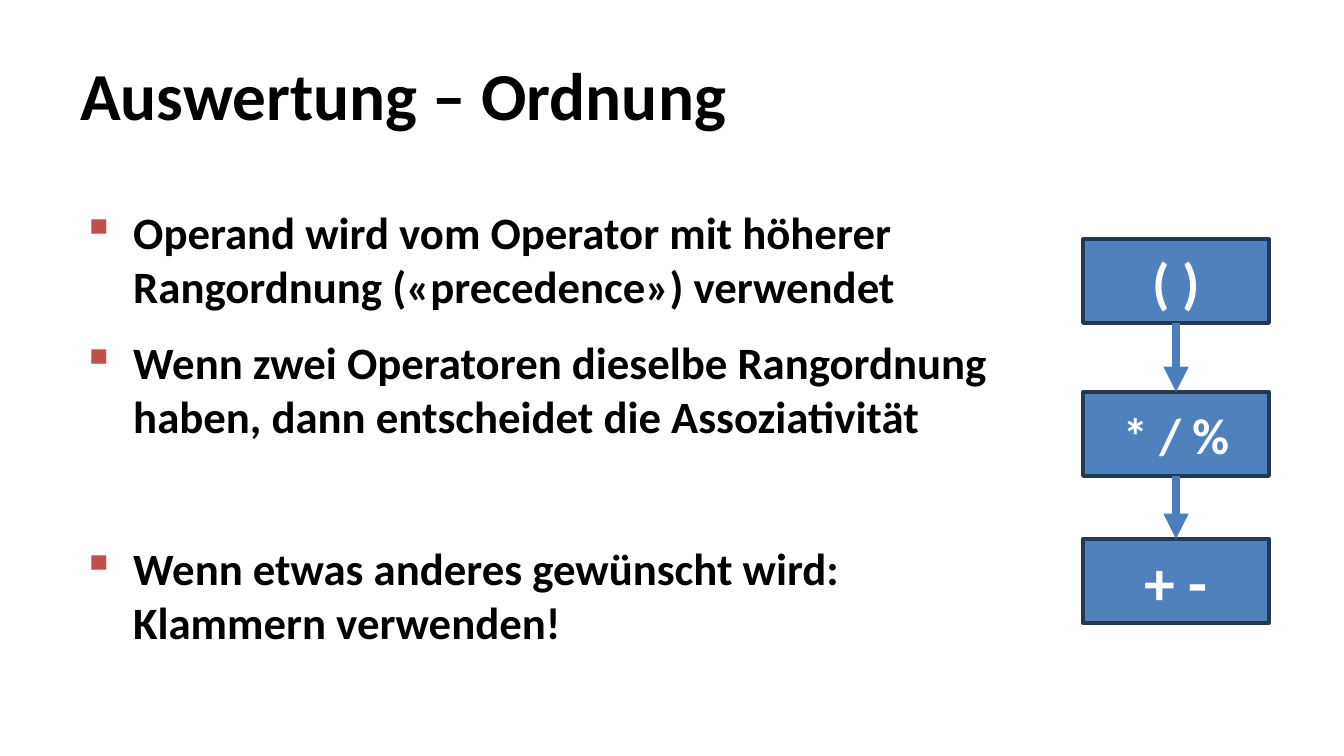
from pptx import Presentation
from pptx.dml.color import RGBColor
from pptx.enum.shapes import MSO_CONNECTOR, MSO_SHAPE
from pptx.enum.text import MSO_ANCHOR, PP_ALIGN
from pptx.oxml.ns import qn
from pptx.util import Emu, Pt
from lxml.etree import SubElement

EMU_PER_PX = 914400 / 134.4

BULLETS = [
    ("Operand wird vom Operator mit höherer Rangordnung («precedence») verwendet", 6),
    ("Wenn zwei Operatoren dieselbe Rangordnung haben, dann entscheidet die Assoziativität", 6),
    ("Wenn etwas anderes gewünscht wird: Klammern verwenden!", 47),
]
RANKS = [("( )", 239, 30), ("* / %", 392, 27), ("+ -", 539, 33)]


def px(n):
    return Emu(round(n * EMU_PER_PX))


def rgb(color):
    return RGBColor.from_string(color)


def write(p, text, size=24, color="000000", align=PP_ALIGN.LEFT, before=0, after=0):
    p.alignment = align
    p.space_before = Pt(before)
    p.space_after = Pt(after)
    r = p.add_run()
    r.text = text
    r.font.name = "Calibri"
    r.font.size = Pt(size)
    r.font.bold = True
    r.font.color.rgb = rgb(color)


def add_bullet(p, char="▪", color="C0504D", indent=51):
    pPr = p._p.get_or_add_pPr()
    pPr.set("marL", str(px(indent)))
    pPr.set("indent", str(-px(indent)))
    clr = SubElement(pPr, qn("a:buClr"))
    SubElement(clr, qn("a:srgbClr")).set("val", color)
    SubElement(pPr, qn("a:buChar")).set("char", char)


def add_text_box(s, x, y, w, h, anchor=MSO_ANCHOR.TOP):
    tf = s.shapes.add_textbox(px(x), px(y), px(w), px(h)).text_frame
    tf.word_wrap = True
    tf.vertical_anchor = anchor
    return tf


def add_bullets(s, x, y, w, h):
    tf = add_text_box(s, x, y, w, h)
    for i, (text, before) in enumerate(BULLETS):
        p = tf.add_paragraph() if i else tf.paragraphs[0]
        write(p, text, before=before, after=6)
        add_bullet(p)


def add_rank(s, text, y, size):
    sp = s.shapes.add_shape(MSO_SHAPE.RECTANGLE, px(1083), px(y), px(186), px(84))
    sp.shadow.inherit = False
    sp.fill.solid()
    sp.fill.fore_color.rgb = rgb("4F81BD")
    sp.line.color.rgb = rgb("233953")
    sp.line.width = Pt(2)
    tf = sp.text_frame
    tf.vertical_anchor = MSO_ANCHOR.MIDDLE
    write(tf.paragraphs[0], text, size=size, color="FFFFFF", align=PP_ALIGN.CENTER)
    return sp


def add_arrow(s, upper, lower):
    cx = s.shapes.add_connector(MSO_CONNECTOR.STRAIGHT, 0, 0, 0, 0)
    cx.begin_connect(upper, 2)
    cx.end_connect(lower, 0)
    cx.line.color.rgb = rgb("4B7EBC")
    cx.line.width = Pt(4.5)
    SubElement(cx.line._get_or_add_ln(), qn("a:tailEnd")).set("type", "triangle")
    SubElement(cx._element.spPr, qn("a:effectLst"))


def main():
    prs = Presentation()
    prs.slide_width, prs.slide_height = px(1344), px(756)
    s = prs.slides.add_slide(prs.slide_layouts[6])
    title = add_text_box(s, 67, 31, 1210, 126, anchor=MSO_ANCHOR.MIDDLE)
    write(title.paragraphs[0], "Auswertung – Ordnung", size=36)
    ranks = [add_rank(s, *rank) for rank in RANKS]
    for upper, lower in zip(ranks, ranks[1:]):
        add_arrow(s, upper, lower)
    add_bullets(s, 69, 198, 953, 445)
    prs.save("out.pptx")


if __name__ == "__main__":
    main()
